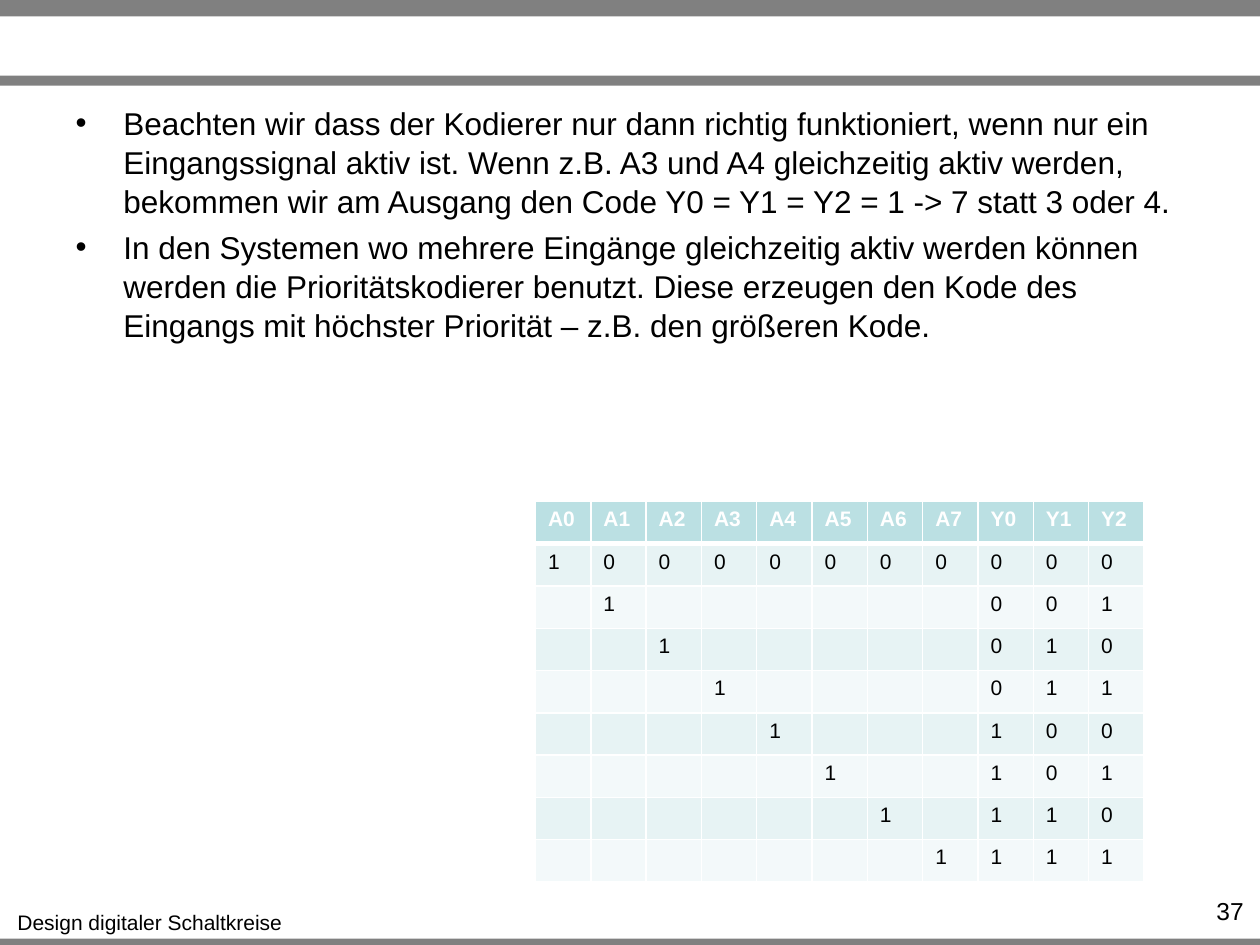
"""Build the slide on encoders and priority encoders with its truth table."""
from dataclasses import dataclass

from lxml import etree
from pptx import Presentation
from pptx.dml.color import RGBColor
from pptx.enum.shapes import MSO_SHAPE
from pptx.enum.text import MSO_ANCHOR, MSO_AUTO_SIZE, PP_ALIGN
from pptx.oxml.ns import qn
from pptx.util import Inches, Pt

RECTANGLE = MSO_SHAPE.RECTANGLE
TOP = MSO_ANCHOR.TOP
NO_AUTOFIT = MSO_AUTO_SIZE.NONE
LEFT, CENTER, RIGHT = PP_ALIGN.LEFT, PP_ALIGN.CENTER, PP_ALIGN.RIGHT


@dataclass(frozen=True)
class Theme:
    font: str = "Arial"
    text: str = "000000"
    white: str = "FFFFFF"
    bar: str = "808080"
    header: str = "BBE0E3"
    bands: tuple = ("F3F9FA", "E7F3F4")
    body_size: int = 18
    number_size: int = 14
    small_size: int = 12


theme = Theme()


def add_run(paragraph, text, size, color=theme.text, bold=False):
    run = paragraph.add_run()
    run.text = text
    run.font.name = theme.font
    run.font.size = Pt(size)
    run.font.bold = bold
    run.font.color.rgb = RGBColor.from_string(color)


def add_border(cell, side, width):
    properties = cell._tc.get_or_add_tcPr()
    line = etree.SubElement(properties, qn(f"a:ln{side}"), w=str(Pt(width)))
    fill = etree.SubElement(line, qn("a:solidFill"))
    etree.SubElement(fill, qn("a:srgbClr"), val=theme.white)


presentation = Presentation()
presentation.slide_width = Inches(10)
presentation.slide_height = Inches(7.5)
slide = presentation.slides.add_slide(presentation.slide_layouts[1])
title, body = slide.placeholders
title.element.getparent().remove(title.element)

for bar_top, bar_height in ((7.45, 0.08), (0, 0.13), (0.6, 0.08)):
    bar = slide.shapes.add_shape(
        RECTANGLE, 0, Inches(bar_top), presentation.slide_width, Inches(bar_height))
    bar.shadow.inherit = False
    bar.fill.solid()
    bar.fill.fore_color.rgb = RGBColor.from_string(theme.bar)
    bar.line.fill.background()

labels = (
    ("Design digitaler Schaltkreise", (0.03, 7.17, 2.32, 0.3), theme.small_size, CENTER, False),
    ("37", (9.1, 7.06, 0.87, 0.24), theme.number_size, RIGHT, True),
)
for text, box, size, alignment, wrap in labels:
    label = slide.shapes.add_textbox(*map(Inches, box))
    label.text_frame.word_wrap = wrap
    paragraph = label.text_frame.paragraphs[0]
    paragraph.alignment = alignment
    add_run(paragraph, text, size)

body.left, body.top, body.width, body.height = map(Inches, (0.5, 0.76, 9, 1.99))
body.text_frame.auto_size = NO_AUTOFIT
body.text_frame.vertical_anchor = TOP
remarks = (
    "Beachten wir dass der Kodierer nur dann richtig funktioniert, wenn nur ein "
    "Eingangssignal aktiv ist. Wenn z.B. A3 und A4 gleichzeitig aktiv werden, "
    "bekommen wir am Ausgang den Code Y0 = Y1 = Y2 = 1 -> 7 statt 3 oder 4.",
    "In den Systemen wo mehrere Eingänge gleichzeitig aktiv werden können "
    "werden die Prioritätskodierer benutzt. Diese erzeugen den Kode des "
    "Eingangs mit höchster Priorität – z.B. den größeren Kode.",
)
for index, remark in enumerate(remarks):
    paragraph = body.text_frame.add_paragraph() if index else body.text_frame.paragraphs[0]
    paragraph.alignment = LEFT
    paragraph.line_spacing = 1.04
    paragraph.space_before = Pt(3.6 if index else 0)
    properties = paragraph._p.get_or_add_pPr()
    properties.set("marL", str(Inches(0.38)))
    properties.set("indent", str(Inches(-0.38)))
    etree.SubElement(properties, qn("a:buFont"), typeface=theme.font)
    etree.SubElement(properties, qn("a:buChar"), char="•")
    add_run(paragraph, remark, theme.body_size)

inputs, outputs = 8, 3
rows = [[f"A{i}" for i in range(inputs)] + [f"Y{i}" for i in range(outputs)]]
for code in range(inputs):
    off = "" if code else "0"
    one_hot = ["1" if i == code else off for i in range(inputs)]
    rows.append(one_hot + list(f"{code:03b}"))

table = slide.shapes.add_table(
    len(rows), inputs + outputs,
    Inches(4.25), Inches(3.98), Inches(4.83), Inches(3.02)).table
for row_index, values in enumerate(rows):
    is_header = row_index == 0
    fill = theme.header if is_header else theme.bands[row_index % 2]
    color = theme.white if is_header else theme.text
    top_width = 3 if row_index == 1 else 1
    bottom_width = 3 if is_header else 1
    for column_index, value in enumerate(values):
        cell = table.cell(row_index, column_index)
        for side, width in (("L", 1), ("R", 1), ("T", top_width), ("B", bottom_width)):
            add_border(cell, side, width)
        cell.fill.solid()
        cell.fill.fore_color.rgb = RGBColor.from_string(
            theme.bands[1] if row_index == 1 else fill)
        paragraph = cell.text_frame.paragraphs[0]
        paragraph.alignment = LEFT
        if value:
            add_run(paragraph, value, theme.small_size, color, is_header)
        else:
            etree.SubElement(
                paragraph._p, qn("a:endParaRPr"), sz=str(theme.small_size * 100))

presentation.save("out.pptx")
